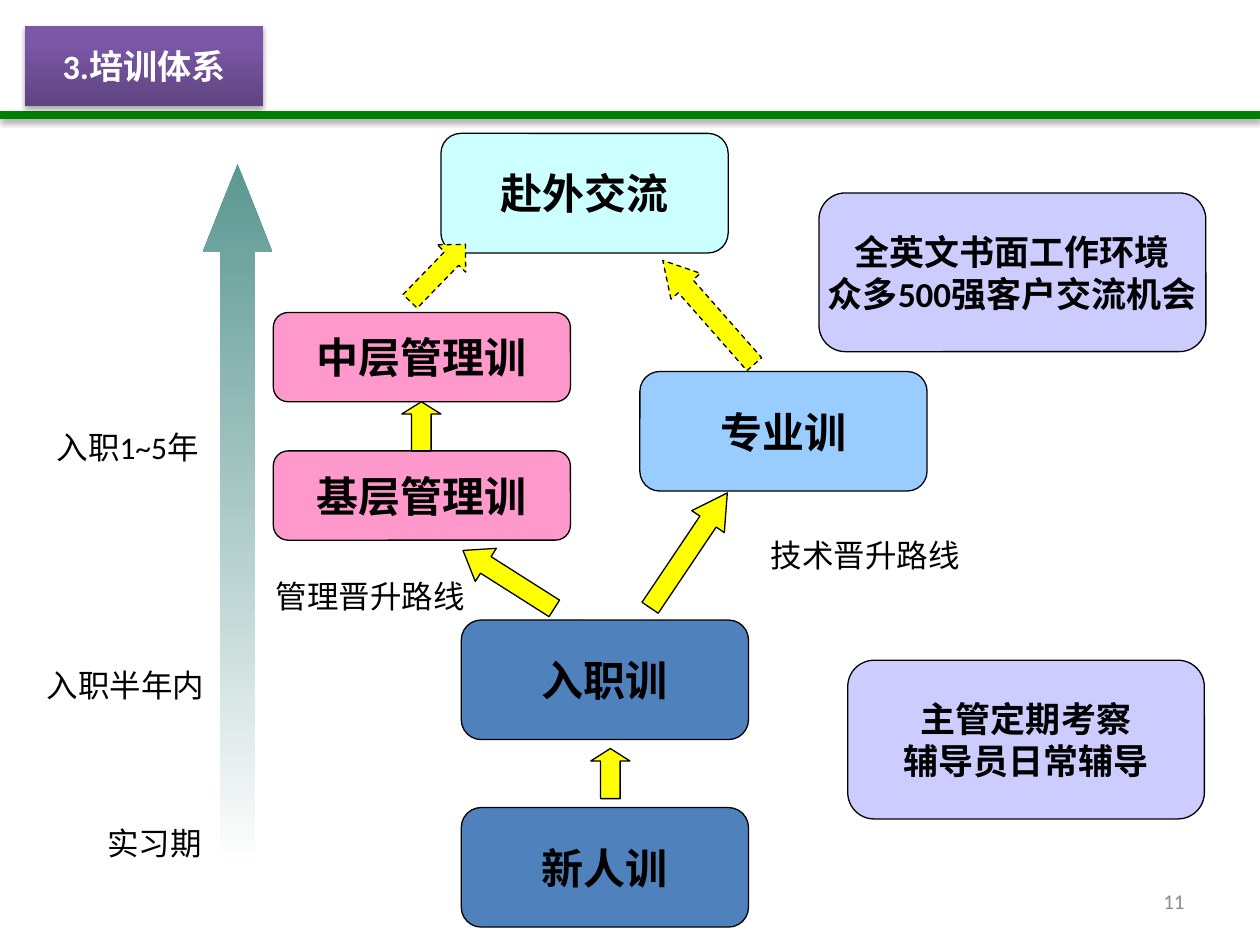
from dataclasses import dataclass

from lxml.etree import SubElement
from pptx import Presentation
from pptx.dml.color import RGBColor
from pptx.enum.dml import MSO_LINE_DASH_STYLE as Dash
from pptx.enum.shapes import MSO_CONNECTOR as Connector, MSO_SHAPE as Preset
from pptx.enum.text import MSO_ANCHOR as Anchor, PP_ALIGN as Align
from pptx.oxml.ns import qn
from pptx.util import Cm, Pt


@dataclass(frozen=True)
class Theme:
    font: str = "Calibri"
    black: str = "000000"
    white: str = "FFFFFF"
    grey: str = "8C8C8C"
    green: str = "008000"
    purple_dark: str = "5F4480"
    purple: str = "7C57A8"
    teal: str = "5B9791"
    yellow: str = "FFFF00"
    entry: str = "4F81BD"
    management: str = "FF99CC"
    technical: str = "99CCFF"
    abroad: str = "CCFFFF"
    note: str = "CCCCFF"
    title_size: float = 19.5
    stage_size: float = 24
    note_size: float = 20
    label_size: float = 18
    number_size: float = 12
    outline: float = 0.75
    rule: float = 4.5


THEME = Theme()


def rgb(value):
    return RGBColor.from_string(value)


def write(shape, lines, size, color=THEME.black, bold=False,
          align=Align.CENTER, anchor=Anchor.MIDDLE, wrap=True):
    frame = shape.text_frame
    frame.word_wrap = wrap
    frame.vertical_anchor = anchor
    frame.text = "\n".join(lines)
    for paragraph in frame.paragraphs:
        paragraph.alignment = align
        font = paragraph.font
        font.name, font.size, font.bold = THEME.font, Pt(size), bold
        font.color.rgb = rgb(color)


def add_soft_shadow(shape):
    properties = shape._element.spPr
    for old in properties.findall(qn("a:effectLst")):
        properties.remove(old)
    effects = SubElement(properties, qn("a:effectLst"))
    shadow = SubElement(effects, qn("a:outerShdw"), blurRad=str(Pt(3.1)),
                        dist=str(Pt(1.8)), dir="5400000", rotWithShape="0")
    color = SubElement(shadow, qn("a:srgbClr"), val=THEME.black)
    SubElement(color, qn("a:alpha"), val="35000")


def add_preset(slide, preset, left, top, width, height):
    shape = slide.shapes.add_shape(preset, Cm(left), Cm(top), Cm(width), Cm(height))
    shape.shadow.inherit = False
    return shape


def paint(shape, color):
    shape.fill.solid()
    shape.fill.fore_color.rgb = rgb(color)
    shape.line.color.rgb = rgb(THEME.black)
    shape.line.width = Pt(THEME.outline)


def paint_gradient(shape, stops, angle):
    shape.fill.gradient()
    shape.fill.gradient_angle = angle
    for stop, (position, color) in zip(shape.fill.gradient_stops, stops):
        stop.position = position
        stop.color.rgb = rgb(color)
    shape.line.fill.background()


def add_box(slide, lines, left, top, width, height, color, size):
    box = add_preset(slide, Preset.ROUNDED_RECTANGLE, left, top, width, height)
    paint(box, color)
    write(box, lines, size, bold=True, wrap=False)


def add_step_arrow(slide, left, top, height, rotation=0, dashed=False):
    width = 0.79
    arrow = add_preset(slide, Preset.UP_ARROW, left, top, width, height)
    arrow.adjustments[1] = height / 4 / width  # head is a quarter of the length
    arrow.rotation = rotation
    paint(arrow, THEME.yellow)
    if dashed:
        arrow.line.dash_style = Dash.DASH


def add_text(slide, text, left, top, width, **style):
    box = slide.shapes.add_textbox(Cm(left), Cm(top), Cm(width), Cm(1.02))
    write(box, [text], **style)


def add_header(slide):
    rule = slide.shapes.add_connector(Connector.STRAIGHT, 0, Cm(2.31), Cm(25.4), Cm(2.31))
    rule.line.color.rgb = rgb(THEME.green)
    rule.line.width = Pt(THEME.rule)
    add_soft_shadow(rule)

    title = add_preset(slide, Preset.RECTANGLE, 0.51, 0.53, 4.8, 1.6)
    paint_gradient(title, [(0, THEME.purple_dark), (0.8, THEME.purple)], 90)
    add_soft_shadow(title)
    write(title, ["3.培训体系"], THEME.title_size, THEME.white, bold=True)


def add_timeline(slide):
    arrow = add_preset(slide, Preset.UP_ARROW, 4.09, 3.3, 1.4, 14.2)
    arrow.adjustments[1] = 1.27
    paint_gradient(arrow, [(0, THEME.teal), (1, THEME.white)], 270)


def main():
    presentation = Presentation()
    presentation.slide_width, presentation.slide_height = Cm(25.4), Cm(19.05)
    slide = presentation.slides.add_slide(presentation.slide_layouts[6])

    add_header(slide)
    add_timeline(slide)

    # Training stages
    wide, flat = (5.79, 2.41), (5.99, 1.8)
    for text, left, top, size, color in [
        ("新人训", 9.3, 16.28, wide, THEME.entry),
        ("入职训", 9.3, 12.5, wide, THEME.entry),
        ("基层管理训", 5.51, 9.09, flat, THEME.management),
        ("中层管理训", 5.51, 6.3, flat, THEME.management),
        ("专业训", 12.9, 7.49, wide, THEME.technical),
        ("赴外交流", 8.89, 2.69, wide, THEME.abroad),
    ]:
        add_box(slide, [text], left, top, *size, color, THEME.stage_size)

    # Promotion arrows
    add_step_arrow(slide, 11.91, 15.09, 1.01)
    add_step_arrow(slide, 9.86, 10.59, 2.18, rotation=302.4)
    add_step_arrow(slide, 13.49, 9.7, 2.79, rotation=33.9)
    add_step_arrow(slide, 8.1, 8.1, 0.99)
    add_step_arrow(slide, 8.43, 4.7, 1.6, rotation=44.1, dashed=True)
    add_step_arrow(slide, 13.89, 4.9, 2.79, rotation=318.6, dashed=True)

    # Side notes
    for lines, left, top, width in [
        (["主管定期考察", "辅导员日常辅导"], 17.09, 13.31, 7.19),
        (["全英文书面工作环境", "众多500强客户交流机会"], 16.51, 3.89, 7.8),
    ]:
        add_box(slide, lines, left, top, width, 3.2, THEME.note, THEME.note_size)

    # Period and route labels
    for text, left, top, width in [
        ("实习期", 1.91, 16.48, 3),
        ("入职半年内", 0.69, 13.31, 3.81),
        ("入职1~5年", 0.89, 8.51, 3.81),
        ("管理晋升路线", 5.31, 11.51, 4.6),
        ("技术晋升路线", 15.29, 10.69, 4.6),
    ]:
        add_text(slide, text, left, top, width, size=THEME.label_size,
                 align=Align.LEFT, anchor=Anchor.TOP)

    # Page number
    add_text(slide, "11", 18.21, 17.65, 5.92, size=THEME.number_size,
             color=THEME.grey, align=Align.RIGHT)

    presentation.save("out.pptx")


if __name__ == "__main__":
    main()
